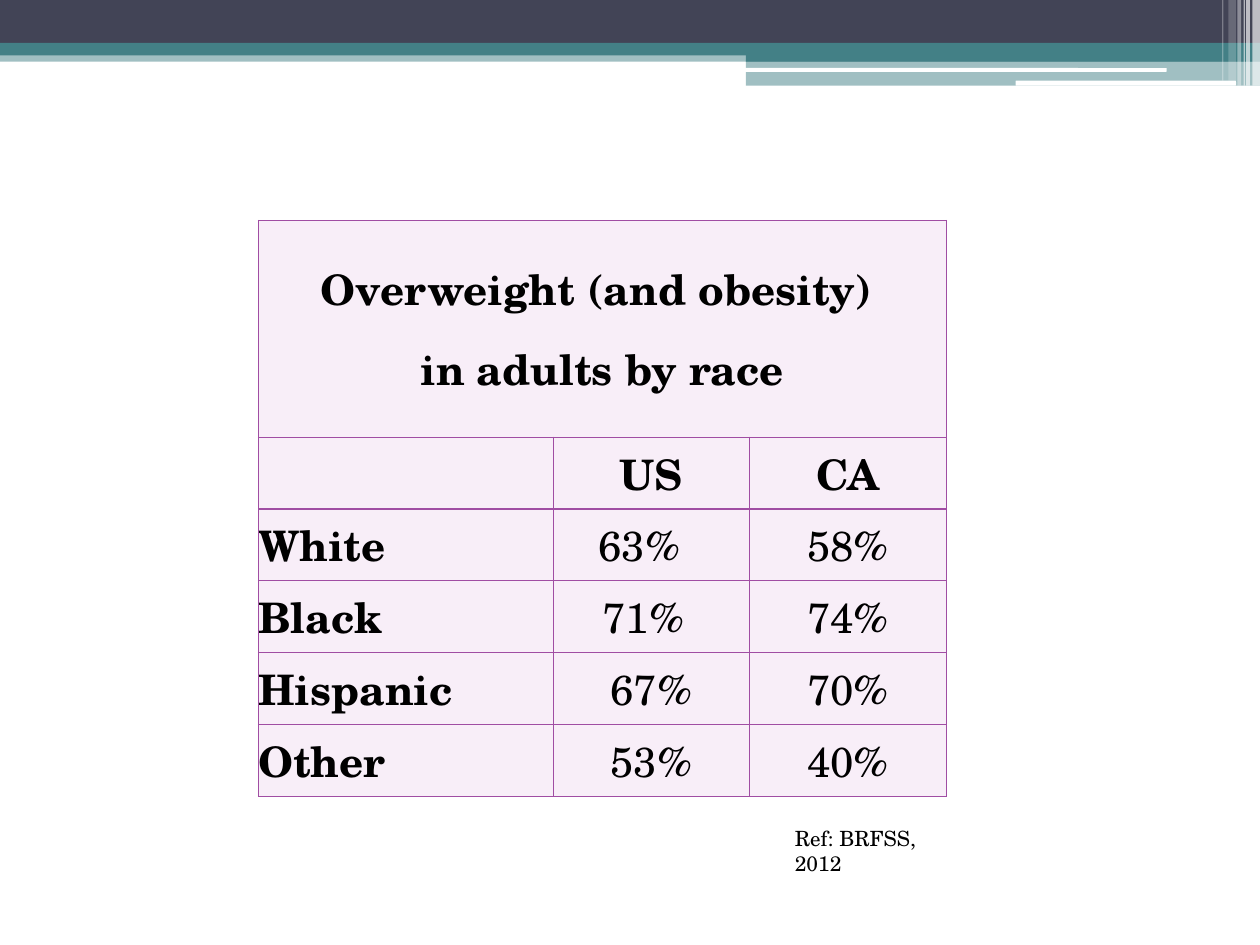
from dataclasses import dataclass

from lxml.etree import SubElement
from pptx import Presentation
from pptx.dml.color import RGBColor
from pptx.enum.shapes import MSO_SHAPE
from pptx.enum.text import MSO_ANCHOR, MSO_AUTO_SIZE, PP_ALIGN
from pptx.oxml.ns import qn
from pptx.util import Inches, Pt

FONT = "TeX Gyre Schola"
BLACK = RGBColor(0x00, 0x00, 0x00)
WHITE = RGBColor(0xFF, 0xFF, 0xFF)
NAVY = RGBColor(0x42, 0x44, 0x56)
TEAL = RGBColor(0x43, 0x80, 0x86)
PURPLE = RGBColor(0xA0, 0x4D, 0xA3)
PALE_PURPLE = RGBColor(0xF8, 0xEE, 0xF8)


@dataclass
class Band:
    left: float
    top: float
    width: float
    height: float
    color: RGBColor
    opacity: int = 100
    rounded: bool = False


@dataclass
class RaceRow:
    race: str
    us: str
    ca: str
    us_right_margin: float = 0


BANDS = [
    Band(0, 0.4, 10, 0.09, TEAL, 50),
    Band(0, 0, 10, 0.34, NAVY),
    Band(0, 0.34, 10, 0.1, TEAL),
    Band(5.92, 0.39, 4.08, 0.1, TEAL),
    Band(5.92, 0.48, 4.08, 0.2, TEAL, 50),
    Band(5.91, 0.54, 3.35, 0.03, WHITE, rounded=True),
    Band(8.06, 0.64, 1.75, 0.04, WHITE, rounded=True),
    Band(9.94, 0, 0.06, 0.68, WHITE, 65),
    Band(9.89, 0, 0.03, 0.68, WHITE, 65),
    Band(9.87, 0, 0.01, 0.68, WHITE, 60),
    Band(9.82, 0, 0.03, 0.68, WHITE, 40),
    Band(9.75, 0, 0.06, 0.64, WHITE, 20),
    Band(9.7, 0, 0.01, 0.64, WHITE, 30),
]
TITLE_LINES = ["Overweight (and obesity) ", "in adults by race"]
RACE_ROWS = [
    RaceRow("White", "63%", "58%", 0.19),
    RaceRow("Black", "71%", "74%", 0.13),
    RaceRow("Hispanic", "67%", "70%"),
    RaceRow("Other", "53%", "40%"),
]
COLUMN_WIDTHS = [2.34, 1.56, 1.56]
TITLE_HEIGHT, ROW_HEIGHT = 1.72, 0.57


def add_band(slide, band: Band) -> None:
    kind = MSO_SHAPE.ROUNDED_RECTANGLE if band.rounded else MSO_SHAPE.RECTANGLE
    sp = slide.shapes.add_shape(kind, Inches(band.left), Inches(band.top),
                                Inches(band.width), Inches(band.height))
    sp.shadow.inherit = False
    sp.line.fill.background()
    sp.fill.solid()
    sp.fill.fore_color.rgb = band.color
    if band.opacity < 100:
        color = sp.fill._xPr.find(qn("a:solidFill"))[0]
        SubElement(color, qn("a:alpha"), val=str(band.opacity * 1000))


def format_text(p, size: float, bold: bool = False) -> None:
    for r in p.runs:
        r.font.name = FONT
        r.font.size = Pt(size)
        r.font.bold = bold
        r.font.color.rgb = BLACK


def style_cell(cell) -> None:
    tc_pr = cell._tc.get_or_add_tcPr()
    for side in ("a:lnL", "a:lnR", "a:lnT", "a:lnB"):
        ln = SubElement(tc_pr, qn(side), w=str(Pt(0.75)))
        fill = SubElement(ln, qn("a:solidFill"))
        SubElement(fill, qn("a:srgbClr"), val=str(PURPLE))
    cell.fill.solid()
    cell.fill.fore_color.rgb = PALE_PURPLE
    cell.vertical_anchor = MSO_ANCHOR.MIDDLE
    cell.margin_left = cell.margin_right = 0
    cell.margin_top = cell.margin_bottom = 0


def set_cell(cell, text: str, bold: bool, align: PP_ALIGN = PP_ALIGN.CENTER) -> None:
    cell.text_frame.text = text
    for p in cell.text_frame.paragraphs:
        p.alignment = align
        format_text(p, 24, bold)


def add_race_table(slide) -> None:
    row_count = len(RACE_ROWS) + 2
    height = TITLE_HEIGHT + ROW_HEIGHT * (row_count - 1)
    table = slide.shapes.add_table(
        row_count, len(COLUMN_WIDTHS), Inches(2.05), Inches(1.75),
        Inches(sum(COLUMN_WIDTHS)), Inches(height)).table
    table.first_row = table.horz_banding = False
    for column, width in zip(table.columns, COLUMN_WIDTHS):
        column.width = Inches(width)
    for i, row in enumerate(table.rows):
        row.height = Inches(ROW_HEIGHT if i else TITLE_HEIGHT)
    for cell in table.iter_cells():
        style_cell(cell)

    # Title and column heads
    title = table.cell(0, 0)
    title.merge(table.cell(0, 2))
    set_cell(title, "\n".join(TITLE_LINES), True)
    title.text_frame.paragraphs[1].space_before = Pt(8.6)
    set_cell(table.cell(1, 1), "US", True)
    set_cell(table.cell(1, 2), "CA", True)

    # One row per race
    for i, row in enumerate(RACE_ROWS, start=2):
        set_cell(table.cell(i, 0), row.race, True, PP_ALIGN.LEFT)
        set_cell(table.cell(i, 1), row.us, False)
        set_cell(table.cell(i, 2), row.ca, False)
        table.cell(i, 1).margin_right = Inches(row.us_right_margin)


def add_reference(slide) -> None:
    box = slide.shapes.add_textbox(Inches(6.21), Inches(6.5), Inches(1.56), Inches(0.3))
    tf = box.text_frame
    tf.word_wrap = True
    tf.auto_size = MSO_AUTO_SIZE.SHAPE_TO_FIT_TEXT
    tf.text = "Ref: BRFSS, 2012"
    format_text(tf.paragraphs[0], 12)


def main() -> None:
    prs = Presentation()
    prs.slide_width, prs.slide_height = Inches(10), Inches(7.5)
    slide = prs.slides.add_slide(prs.slide_layouts[6])
    for band in BANDS:
        add_band(slide, band)
    add_race_table(slide)
    add_reference(slide)
    prs.save("out.pptx")


if __name__ == "__main__":
    main()
